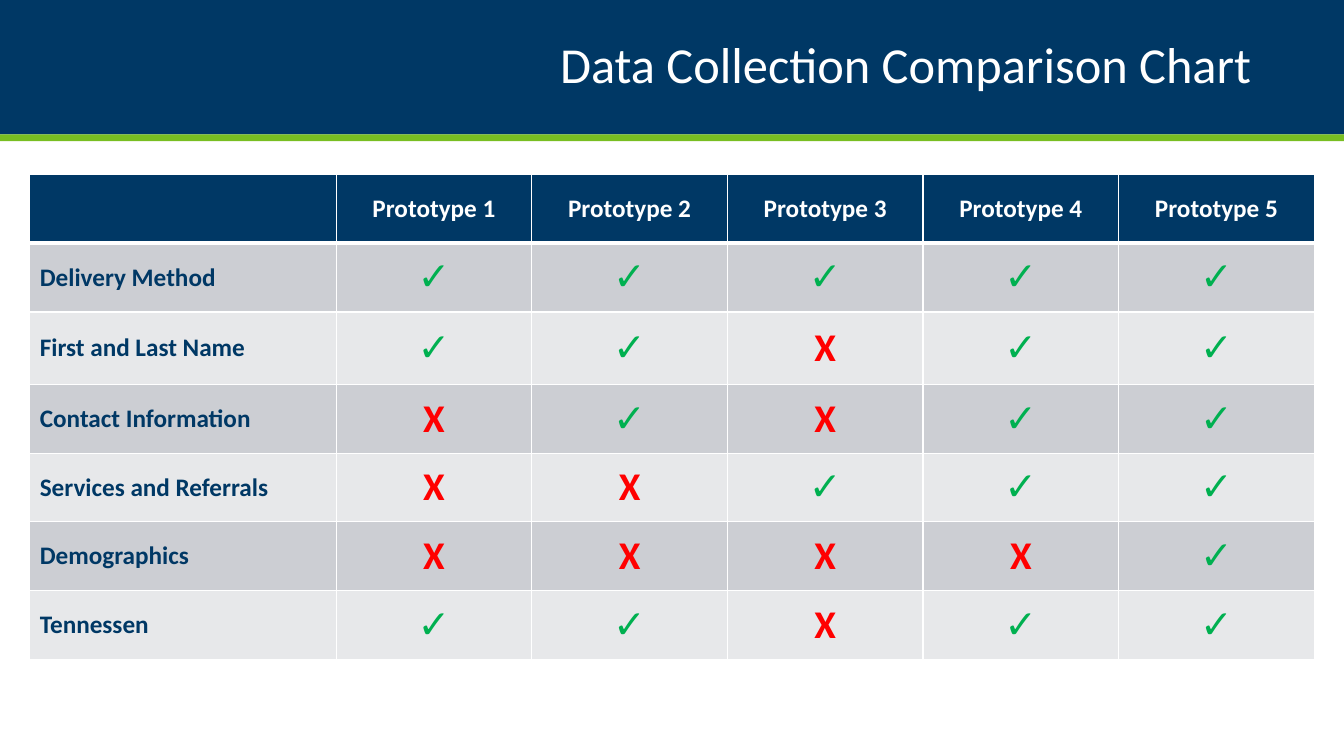
from lxml.etree import SubElement
from pptx import Presentation
from pptx.dml.color import RGBColor
from pptx.enum.shapes import MSO_SHAPE
from pptx.enum.text import MSO_ANCHOR, PP_ALIGN
from pptx.oxml.ns import qn
from pptx.util import Cm, Pt

NAVY = RGBColor(0x00, 0x38, 0x65)
LIME = RGBColor(0x78, 0xBE, 0x21)
WHITE = RGBColor(0xFF, 0xFF, 0xFF)
DARK_BAND = RGBColor(0xCC, 0xCE, 0xD3)
LIGHT_BAND = RGBColor(0xE7, 0xE8, 0xEA)
GREEN = RGBColor(0x00, 0xB0, 0x50)
RED = RGBColor(0xFF, 0x00, 0x00)

HEADER = {"size": Pt(18), "bold": True, "name": "Calibri"}
MARK = {"size": Pt(28), "bold": True, "name": "Calibri"}
MARK_COLORS = {"✓": GREEN, "X": RED}
ROWS = [
    ("", [f"Prototype {n}" for n in range(1, 6)]),
    ("Delivery Method", "✓✓✓✓✓"),
    ("First and Last Name", "✓✓X✓✓"),
    ("Contact Information", "X✓X✓✓"),
    ("Services and Referrals", "XX✓✓✓"),
    ("Demographics", "XXXX✓"),
    ("Tennessen", "✓✓X✓✓"),
]


def write(tf, text, align, color, formats):
    p = tf.paragraphs[0]
    p.alignment = align
    r = p.add_run()
    r.text = text
    r.font.color.rgb = color
    for key, value in formats.items():
        setattr(r.font, key, value)


def add_borders(cell, bottom):
    tcPr = cell._tc.get_or_add_tcPr()
    widths = {"a:lnL": 1, "a:lnR": 1, "a:lnT": 1, "a:lnB": bottom}
    for tag, width in widths.items():
        ln = SubElement(tcPr, qn(tag), w=str(Pt(width)))
        fill = SubElement(ln, qn("a:solidFill"))
        SubElement(fill, qn("a:srgbClr"), val=str(WHITE))


prs = Presentation()
prs.slide_width, prs.slide_height = Cm(33.87), Cm(19.05)
s = prs.slides.add_slide(prs.slide_layouts[5])

title = s.shapes.title
for top, height, color in [(0, 3.39, NAVY), (3.39, 0.17, LIME)]:
    sp = s.shapes.add_shape(MSO_SHAPE.RECTANGLE, 0, Cm(top), prs.slide_width, Cm(height))
    sp.shadow.inherit = False
    sp.fill.solid()
    sp.fill.fore_color.rgb = color
    sp.line.fill.background()
    title.element.addprevious(sp.element)

title.left, title.top, title.width, title.height = Cm(2.33), Cm(0), Cm(29.21), Cm(3.39)
tf = title.text_frame
tf.word_wrap = True
tf.vertical_anchor = MSO_ANCHOR.MIDDLE
tf.margin_left = tf.margin_right = 0
tf.margin_top = tf.margin_bottom = Cm(0.51)
write(tf, "Data Collection Comparison Chart", PP_ALIGN.RIGHT, WHITE, {"size": Pt(36), "name": "Calibri"})
tf.paragraphs[0].line_spacing = 0.9

table = s.shapes.add_table(len(ROWS), 6, Cm(0.75), Cm(4.4), Cm(32.37), Cm(12.19)).table
for i, column in enumerate(table.columns):
    column.width = Cm(4.93 if i else 7.72)

for i, (label, values) in enumerate(ROWS):
    table.rows[i].height = Cm(1.83 if i == 2 else 1.73)
    band = DARK_BAND if i % 2 else LIGHT_BAND
    for j, text in enumerate([label, *values]):
        cell = table.cell(i, j)
        cell.vertical_anchor = MSO_ANCHOR.MIDDLE
        add_borders(cell, 1 if i else 3)
        cell.fill.solid()
        cell.fill.fore_color.rgb = band if i else NAVY
        if text in MARK_COLORS:
            write(cell.text_frame, text, PP_ALIGN.CENTER, MARK_COLORS[text], MARK)
        elif text:
            align = PP_ALIGN.CENTER if j else PP_ALIGN.LEFT
            write(cell.text_frame, text, align, NAVY if i else WHITE, HEADER)

prs.save("out.pptx")
